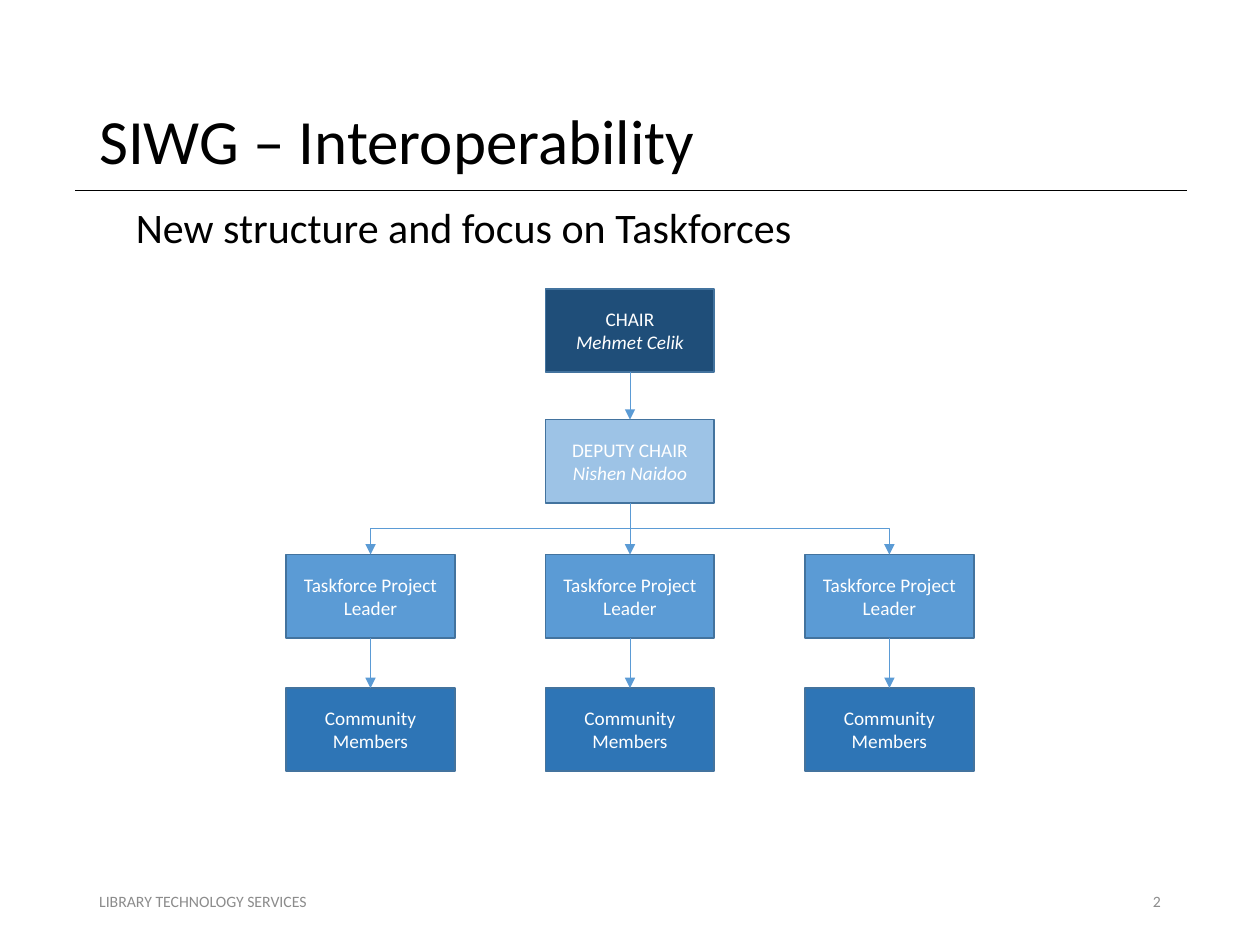
"""Build the SIWG Interoperability slide with its taskforce organisation chart."""
from lxml import etree
from pptx import Presentation
from pptx import util as u
from pptx.dml.color import RGBColor
from pptx.enum import shapes, text
from pptx.oxml.ns import qn

COLORS = {
    "text": "000000", "footer": "8C8C8C", "white": "FFFFFF",
    "chair": "1F4E79", "deputy": "9DC3E6", "leader": "5B9BD5",
    "members": "2E75B6", "border": "43739E", "arrow": "5B9BD5",
}
FONT = "Calibri"
LEFT, MIDDLE = text.PP_ALIGN.LEFT, text.MSO_ANCHOR.MIDDLE

# text, (left, top, width, height), size, colour, alignment, anchor, indent
LABELS = [
    ("SIWG – Interoperability", (1.75, 1.02, 21.9, 3.56), 36, "text", LEFT, MIDDLE, 0),
    ("New structure and focus on Taskforces", (1.75, 3.94, 21.9, 12.09), 24, "text",
     LEFT, text.MSO_ANCHOR.TOP, 0.74),
    ("LIBRARY TECHNOLOGY SERVICES", (1.75, 17.65, 5.72, 1.02), 9, "footer", LEFT, MIDDLE, 0),
    ("2", (17.93, 17.65, 5.72, 1.02), 9, "footer", text.PP_ALIGN.RIGHT, MIDDLE, 0),
]
LEVELS = [
    {"top": 5.82, "fill": "chair", "columns": [0], "lines": ["CHAIR", "Mehmet Celik"]},
    {"top": 8.46, "fill": "deputy", "columns": [0], "lines": ["DEPUTY CHAIR", "Nishen Naidoo"]},
    {"top": 11.18, "fill": "leader", "columns": [-1, 0, 1], "lines": ["Taskforce Project Leader"]},
    {"top": 13.87, "fill": "members", "columns": [-1, 0, 1], "lines": ["Community Members"]},
]
CENTER, PITCH, BOX_WIDTH, BOX_HEIGHT = 12.7, 5.23, 3.4, 1.68


def color(name):
    return RGBColor.from_string(COLORS[name])


def write(paragraph, words, size, color_name, alignment, italic=False):
    paragraph.text = words
    paragraph.alignment = alignment
    font = paragraph.font
    font.name, font.size, font.italic = FONT, u.Pt(size), italic
    font.color.rgb = color(color_name)


def add_label(slide, words, place, size, color_name, alignment, anchor, indent):
    frame = slide.shapes.add_textbox(*map(u.Cm, place)).text_frame
    frame.word_wrap = True
    frame.vertical_anchor = anchor
    paragraph = frame.paragraphs[0]
    if indent:
        paragraph._p.get_or_add_pPr().set("marL", str(u.Cm(indent)))
    write(paragraph, words, size, color_name, alignment)


def add_box(slide, level, column):
    left = CENTER + column * PITCH - BOX_WIDTH / 2
    place = map(u.Cm, (left, level["top"], BOX_WIDTH, BOX_HEIGHT))
    box = slide.shapes.add_shape(shapes.MSO_SHAPE.RECTANGLE, *place)
    box.shadow.inherit = False
    box.fill.solid()
    box.fill.fore_color.rgb = color(level["fill"])
    box.line.color.rgb = color("border")
    box.line.width = u.Pt(1)
    frame = box.text_frame
    frame.word_wrap = True
    frame.vertical_anchor = MIDDLE
    for index, words in enumerate(level["lines"]):
        paragraph = frame.add_paragraph() if index else frame.paragraphs[0]
        write(paragraph, words, 11, "white", text.PP_ALIGN.CENTER, italic=index > 0)
    return box


def add_line(slide, kind, points, color_name, width):
    line = slide.shapes.add_connector(kind, *points)
    line.line.color.rgb = color(color_name)
    line.line.width = u.Pt(width)
    etree.SubElement(line._element.spPr, qn("a:effectLst"))
    return line


def turn_elbow(connector, parent, child):
    """Rotate an elbow so that it leaves and arrives vertically."""
    start_x, end_x = (box.left + box.width // 2 for box in (parent, child))
    start_y, end_y = parent.top + parent.height, child.top
    drop, reach = end_y - start_y, abs(end_x - start_x)
    connector.left = (start_x + end_x - drop) // 2
    connector.top = (start_y + end_y - reach) // 2
    connector.width, connector.height = drop, reach
    to_right = end_x > start_x
    transform = connector._element.spPr.find(qn("a:xfrm"))
    transform.set("rot", str((270 if to_right else 90) * 60000))
    transform.set("flipH", str(int(to_right)))


def add_arrow(slide, parent, child):
    straight = parent.left == child.left
    kind = shapes.MSO_CONNECTOR.STRAIGHT if straight else shapes.MSO_CONNECTOR.ELBOW
    arrow = add_line(slide, kind, (0, 0, 0, 0), "arrow", 0.5)
    arrow.begin_connect(parent, 2)
    arrow.end_connect(child, 0)
    if not straight:
        turn_elbow(arrow, parent, child)
    etree.SubElement(arrow.line._get_or_add_ln(), qn("a:tailEnd"), type="triangle")


def main():
    presentation = Presentation()
    presentation.slide_width, presentation.slide_height = u.Cm(25.4), u.Cm(19.05)
    slide = presentation.slides.add_slide(presentation.slide_layouts[6])
    rule = map(u.Cm, (1.52, 3.84, 23.93, 3.84))
    add_line(slide, shapes.MSO_CONNECTOR.STRAIGHT, rule, "text", 1)
    for label in LABELS:
        add_label(slide, *label)

    parents = {}
    for level in LEVELS:
        boxes = {column: add_box(slide, level, column) for column in level["columns"]}
        if parents:
            for column, box in boxes.items():
                add_arrow(slide, parents.get(column, parents[0]), box)
        parents = boxes
    presentation.save("out.pptx")


if __name__ == "__main__":
    main()
